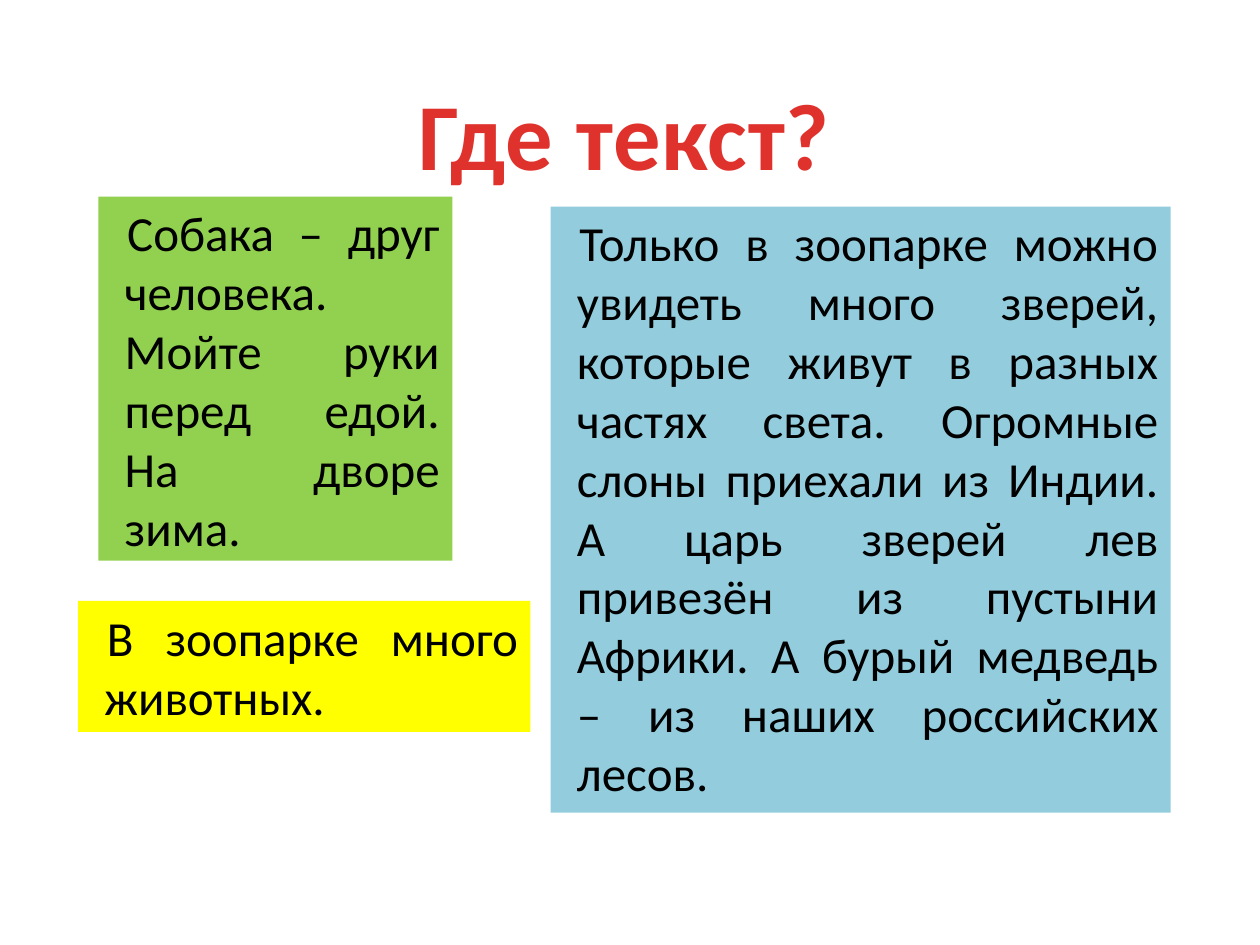
"""Build a slide asking which of three passages is a text."""
from lxml.etree import SubElement
from pptx import Presentation
from pptx.dml.color import RGBColor
from pptx.enum.text import MSO_ANCHOR, MSO_AUTO_SIZE, PP_ALIGN
from pptx.oxml.ns import qn
from pptx.util import Inches, Pt

RED = RGBColor(0xE0, 0x32, 0x2D)
BLACK = RGBColor(0x00, 0x00, 0x00)
GREEN = RGBColor(0x92, 0xD0, 0x50)
YELLOW = RGBColor(0xFF, 0xFF, 0x00)
BLUE = RGBColor(0x93, 0xCD, 0xDD)


def place(shape, left, top, width, height):
    shape.left, shape.top = Inches(left), Inches(top)
    shape.width, shape.height = Inches(width), Inches(height)


def write(shape, text, size, color, alignment):
    frame = shape.text_frame
    frame.text = text
    frame.auto_size = MSO_AUTO_SIZE.NONE
    paragraph = frame.paragraphs[0]
    paragraph.alignment = alignment
    paragraph.space_before = Pt(0)
    SubElement(paragraph._p.get_or_add_pPr(), qn("a:buNone"))
    paragraph.font.name = "Calibri"
    paragraph.font.size = Pt(size)
    paragraph.font.color.rgb = color
    return paragraph


prs = Presentation()
prs.slide_width, prs.slide_height = Inches(10), Inches(7.5)
slide = prs.slides.add_slide(prs.slide_layouts[1])

question = slide.shapes.title
place(question, 3.2, 0.55, 3.51, 1.01)
heading = write(question, "Где текст?", 54, RED, PP_ALIGN.CENTER)
heading.font.bold = True
heading.runs[0]._r.get_or_add_rPr().set("spc", "50")
question.text_frame.word_wrap = False

sentences = slide.placeholders[1]
zoo_sentence = slide.shapes.add_textbox(0, 0, 0, 0)
zoo_story = slide.shapes.add_textbox(0, 0, 0, 0)

passages = [
    (sentences, (0.78, 1.56, 2.81, 2.89), GREEN,
     "Собака – друг человека. Мойте руки перед едой. На дворе зима."),
    (zoo_sentence, (0.62, 4.77, 3.59, 1.04), YELLOW,
     "В зоопарке много животных."),
    (zoo_story, (4.37, 1.64, 4.92, 4.81), BLUE,
     "Только в зоопарке можно увидеть много зверей, которые живут в разных "
     "частях света. Огромные слоны приехали из Индии. А царь зверей лев "
     "привезён из пустыни Африки. А бурый медведь – из наших российских лесов."),
]
for passage, box, color, text in passages:
    place(passage, *box)
    passage.fill.solid()
    passage.fill.fore_color.rgb = color
    paragraph = write(passage, text, 28, BLACK, PP_ALIGN.JUSTIFY)
    indents = paragraph._p.get_or_add_pPr()
    indents.set("marL", str(Inches(0.11)))
    indents.set("indent", str(Inches(0.02)))
    passage.text_frame.word_wrap = True
    passage.text_frame.vertical_anchor = MSO_ANCHOR.TOP

prs.save("out.pptx")
